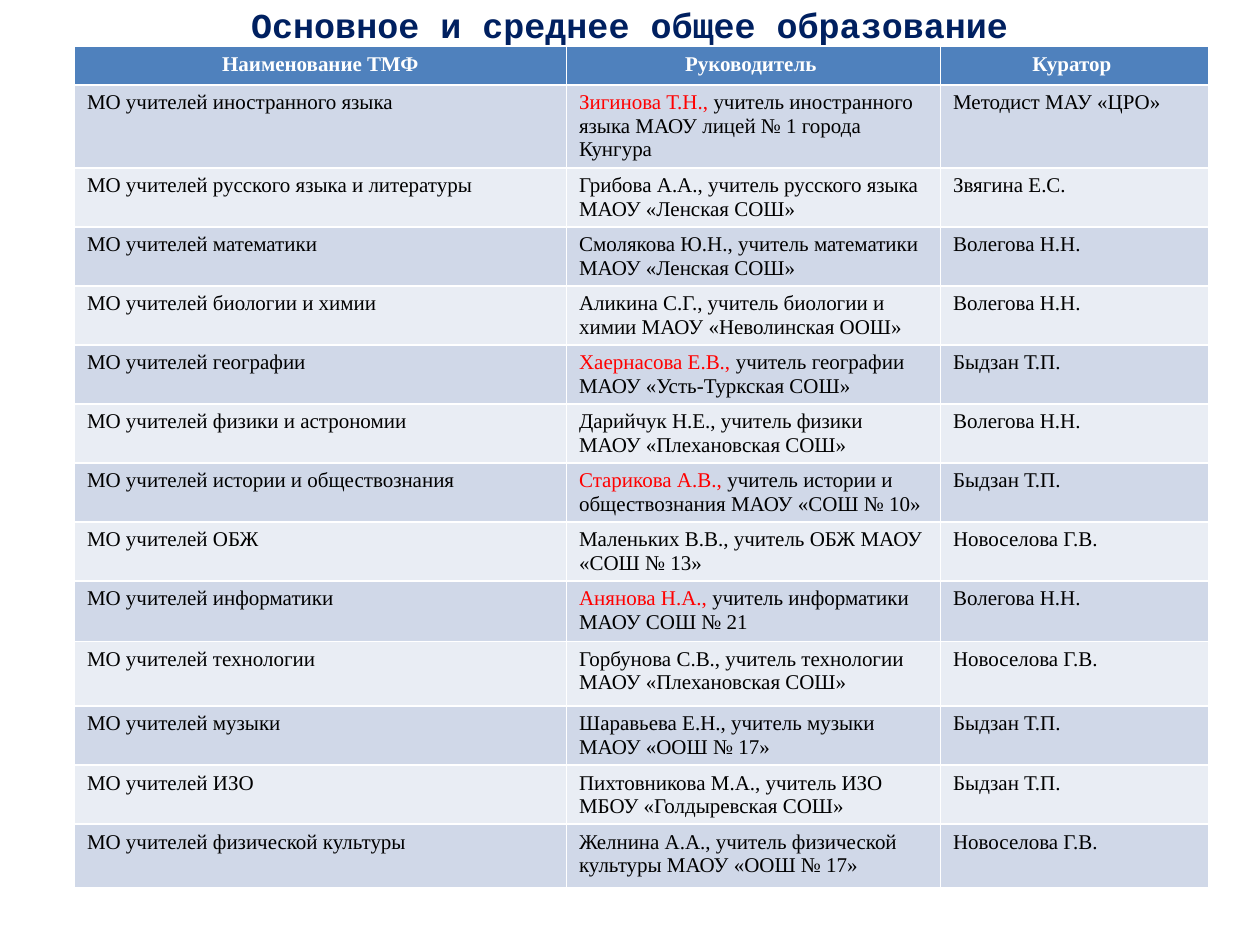
"""Build a slide listing the teachers' associations with their leaders and curators."""
from dataclasses import dataclass

from pptx import Presentation
from pptx import util as u
from pptx.dml.color import RGBColor
from pptx.enum import text

NAVY = RGBColor(0x00, 0x20, 0x60)
BLUE = RGBColor(0x4F, 0x81, 0xBD)
BAND_DARK = RGBColor(0xD0, 0xD8, 0xE8)
BAND_LIGHT = RGBColor(0xE9, 0xED, 0xF4)
WHITE = RGBColor(0xFF, 0xFF, 0xFF)
BLACK = RGBColor(0x00, 0x00, 0x00)
RED = RGBColor(0xFF, 0x00, 0x00)

TITLE = "Основное и среднее общее образование"
HEADERS = ("Наименование ТМФ", "Руководитель ", "Куратор ")
COLUMN_WIDTHS = (9.92, 7.54, 5.4)
HEADER_HEIGHT = 0.78


@dataclass(frozen=True)
class Association:
    subject: str
    leader: str
    duty: str
    curator: str
    height: float = 1.19
    highlighted: bool = False


ASSOCIATIONS = (
    Association("иностранного языка", "Зигинова Т.Н.,",
                "учитель иностранного языка МАОУ лицей № 1 города Кунгура",
                "Методист МАУ «ЦРО»", 1.66, True),
    Association("русского языка и литературы", "Грибова А.А.,",
                "учитель русского языка МАОУ «Ленская СОШ»", "Звягина Е.С."),
    Association("математики", "Смолякова Ю.Н.,",
                "учитель математики МАОУ «Ленская СОШ»", "Волегова Н.Н."),
    Association("биологии и химии", "Аликина С.Г.,",
                "учитель биологии и химии МАОУ «Неволинская ООШ»", "Волегова Н.Н."),
    Association("географии", "Хаернасова Е.В.,",
                "учитель географии МАОУ «Усть-Туркская СОШ»", "Быдзан Т.П.",
                highlighted=True),
    Association("физики и астрономии", "Дарийчук Н.Е.,",
                "учитель физики МАОУ «Плехановская СОШ»", "Волегова Н.Н."),
    Association("истории и обществознания", "Старикова А.В.,",
                "учитель истории и обществознания МАОУ «СОШ № 10»", "Быдзан Т.П.",
                highlighted=True),
    Association("ОБЖ", "Маленьких В.В.,",
                "учитель ОБЖ МАОУ «СОШ № 13»", "Новоселова Г.В."),
    Association("информатики", "Анянова Н.А.,",
                "учитель информатики МАОУ СОШ № 21", "Волегова Н.Н.", 1.22, True),
    Association("технологии", "Горбунова С.В.,",
                "учитель технологии МАОУ «Плехановская СОШ»", "Новоселова Г.В.", 1.3),
    Association("музыки", "Шаравьева Е.Н.,",
                "учитель музыки МАОУ «ООШ № 17»", "Быдзан Т.П."),
    Association("ИЗО", "Пихтовникова М.А.,",
                "учитель ИЗО МБОУ «Голдыревская СОШ»", "Быдзан Т.П."),
    Association("физической культуры", "Желнина А.А.,",
                "учитель физической культуры МАОУ «ООШ № 17»", "Новоселова Г.В.", 1.28),
)


def add_text(paragraph, content: str, *, size: int = 12, font: str = "Times New Roman",
             color: RGBColor = BLACK, bold: bool = False, centered: bool = False) -> None:
    run = paragraph.add_run()
    run.text = content
    run.font.size = u.Pt(size)
    run.font.name = font
    run.font.bold = bold
    run.font.color.rgb = color
    if centered:
        paragraph.alignment = text.PP_ALIGN.CENTER


def style_cell(cell, fill: RGBColor) -> None:
    cell.margin_bottom = u.Cm(0.02)
    cell.fill.solid()
    cell.fill.fore_color.rgb = fill


def add_title(slide) -> None:
    shape = slide.shapes.add_textbox(u.Cm(0), u.Cm(-0.2), u.Cm(25.4), u.Cm(1.4))
    frame = shape.text_frame
    frame.word_wrap = True
    frame.vertical_anchor = text.MSO_ANCHOR.MIDDLE
    add_text(frame.paragraphs[0], TITLE, size=20, font="Courier New",
             color=NAVY, bold=True, centered=True)


def add_associations(slide) -> None:
    heights = [HEADER_HEIGHT] + [association.height for association in ASSOCIATIONS]
    table = slide.shapes.add_table(
        len(heights), len(HEADERS), u.Cm(1.5), u.Cm(0.93),
        u.Cm(sum(COLUMN_WIDTHS)), u.Cm(sum(heights))).table
    for column, width in zip(table.columns, COLUMN_WIDTHS):
        column.width = u.Cm(width)
    for row, height in zip(table.rows, heights):
        row.height = u.Cm(height)

    for cell, header in zip(table.rows[0].cells, HEADERS):
        style_cell(cell, BLUE)
        add_text(cell.text_frame.paragraphs[0], header,
                 color=WHITE, bold=True, centered=True)

    for index, association in enumerate(ASSOCIATIONS, start=1):
        cells = list(table.rows[index].cells)
        for cell in cells:
            style_cell(cell, BAND_DARK if index % 2 else BAND_LIGHT)
        subject, leader, curator = (cell.text_frame.paragraphs[0] for cell in cells)
        add_text(subject, f"МО учителей {association.subject}")
        if association.highlighted:
            add_text(leader, f"{association.leader} ", color=RED)
            add_text(leader, association.duty)
        else:
            add_text(leader, f"{association.leader} {association.duty}")
        add_text(curator, association.curator)


def main() -> None:
    presentation = Presentation()
    presentation.slide_width = u.Cm(25.4)
    presentation.slide_height = u.Cm(19.05)
    slide = presentation.slides.add_slide(presentation.slide_layouts[6])
    add_title(slide)
    add_associations(slide)
    presentation.save("out.pptx")


if __name__ == "__main__":
    main()
